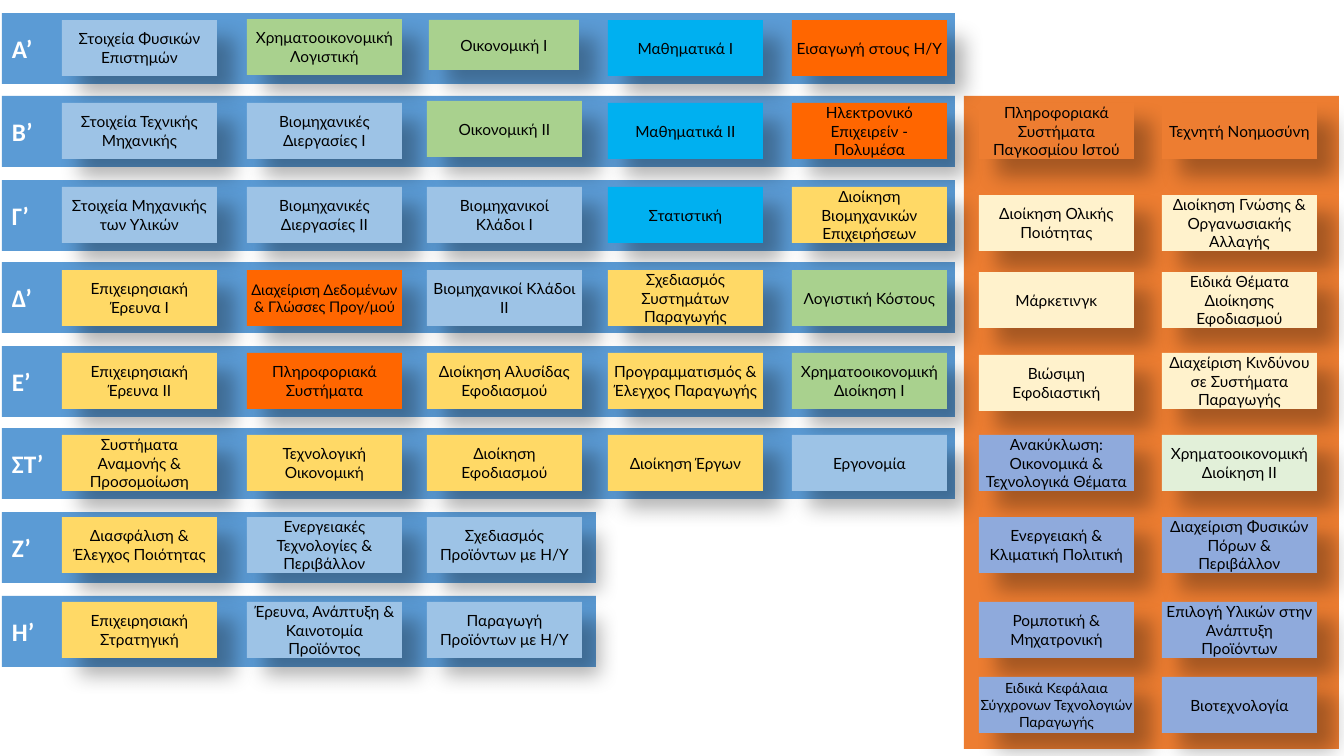
from lxml.etree import SubElement
from pptx import Presentation
from pptx.dml.color import RGBColor
from pptx.enum.shapes import MSO_SHAPE as Shape
from pptx.enum.text import MSO_ANCHOR as Anchor, PP_ALIGN as Align
from pptx.oxml.ns import qn
from pptx.util import Pt

PX = 914400 / 100.8
BAND = RGBColor(0x5B, 0x9B, 0xD5)
ELECTIVE = RGBColor(0xED, 0x7D, 0x31)
WHITE = RGBColor(0xFF, 0xFF, 0xFF)
BLACK = RGBColor(0, 0, 0)
TECH = RGBColor(0x9D, 0xC3, 0xE6)
MGMT = RGBColor(0xFF, 0xD9, 0x66)
ECON = RGBColor(0xA9, 0xD1, 0x8E)
INFO = RGBColor(0xFF, 0x66, 0x00)
MATH = RGBColor(0x00, 0xB0, 0xF0)
PALE_MGMT = RGBColor(0xFF, 0xF2, 0xCC)
PALE_ECON = RGBColor(0xE2, 0xF0, 0xD9)
ENERGY = RGBColor(0x8F, 0xAA, 0xDC)

SEMESTERS = [
    ("Α’", 13, 20, [(TECH, "Στοιχεία Φυσικών Επιστημών"), (ECON, "Χρηματοοικονομική Λογιστική"),
                    (ECON, "Οικονομική Ι"), (MATH, "Μαθηματικά Ι"), (INFO, "Εισαγωγή στους Η/Υ")]),
    ("Β’", 96, 103, [(TECH, "Στοιχεία Τεχνικής Μηχανικής"), (TECH, "Βιομηχανικές Διεργασίες Ι"),
                     (ECON, "Οικονομική ΙΙ"), (MATH, "Μαθηματικά ΙΙ"),
                     (INFO, "Ηλεκτρονικό Επιχειρείν - Πολυμέσα")]),
    ("Γ’", 180, 187, [(TECH, "Στοιχεία Μηχανικής των Υλικών"), (TECH, "Βιομηχανικές Διεργασίες ΙΙ"),
                      (TECH, "Βιομηχανικοί Κλάδοι Ι"), (MATH, "Στατιστική"),
                      (MGMT, "Διοίκηση Βιομηχανικών Επιχειρήσεων")]),
    ("Δ’", 262, 270, [(MGMT, "Επιχειρησιακή Έρευνα Ι"), (INFO, "Διαχείριση Δεδομένων & Γλώσσες Προγ/μού"),
                      (TECH, "Βιομηχανικοί Κλάδοι ΙΙ"), (MGMT, "Σχεδιασμός Συστημάτων Παραγωγής"),
                      (ECON, "Λογιστική Κόστους")]),
    ("Ε’", 346, 353, [(MGMT, "Επιχειρησιακή Έρευνα ΙΙ"), (INFO, "Πληροφοριακά Συστήματα"),
                      (MGMT, "Διοίκηση Αλυσίδας Εφοδιασμού"), (MGMT, "Προγραμματισμός & Έλεγχος Παραγωγής"),
                      (ECON, "Χρηματοοικονομική Διοίκηση Ι")]),
    ("ΣΤ’", 428, 435, [(MGMT, "Συστήματα Αναμονής & Προσομοίωση"), (MGMT, "Τεχνολογική Οικονομική"),
                       (MGMT, "Διοίκηση Εφοδιασμού"), (MGMT, "Διοίκηση Έργων"), (TECH, "Εργονομία")]),
    ("Ζ’", 512, 517, [(MGMT, "Διασφάλιση & Έλεγχος Ποιότητας"), (TECH, "Ενεργειακές Τεχνολογίες & Περιβάλλον"),
                      (TECH, "Σχεδιασμός Προϊόντων με Η/Υ")]),
    ("Η’", 596, 602, [(MGMT, "Επιχειρησιακή Στρατηγική"), (TECH, "Έρευνα, Ανάπτυξη & Καινοτομία Προϊόντος"),
                      (TECH, "Παραγωγή Προϊόντων με Η/Υ")]),
]
ELECTIVES = [
    (103, [(ELECTIVE, "Πληροφοριακά Συστήματα Παγκοσμίου Ιστού"), (ELECTIVE, "Τεχνητή Νοημοσύνη")]),
    (195, [(PALE_MGMT, "Διοίκηση Ολικής Ποιότητας"), (PALE_MGMT, "Διοίκηση Γνώσης & Οργανωσιακής Αλλαγής")]),
    (272, [(PALE_MGMT, "Μάρκετινγκ"), (PALE_MGMT, "Ειδικά Θέματα Διοίκησης Εφοδιασμού")]),
    (353, [(PALE_MGMT, "Βιώσιμη Εφοδιαστική"), (PALE_MGMT, "Διαχείριση Κινδύνου σε Συστήματα Παραγωγής")]),
    (435, [(ENERGY, "Ανακύκλωση: Οικονομικά & Τεχνολογικά Θέματα"), (PALE_ECON, "Χρηματοοικονομική Διοίκηση ΙΙ")]),
    (517, [(ENERGY, "Ενεργειακή & Κλιματική Πολιτική"), (ENERGY, "Διαχείριση Φυσικών Πόρων & Περιβάλλον")]),
    (602, [(ENERGY, "Ρομποτική & Μηχατρονική"), (ENERGY, "Επιλογή Υλικών στην Ανάπτυξη Προϊόντων")]),
    (677, [(ENERGY, "Ειδικά Κεφάλαια Σύγχρονων Τεχνολογιών Παραγωγής"), (ENERGY, "Βιοτεχνολογία")]),
]
SEMESTER_COLUMNS = [62, 247, 427, 608, 792]
ELECTIVE_COLUMNS = [979, 1162]
COURSE_WIDTH, COURSE_HEIGHT = 155, 56
FRAMES = {"Οικονομική Ι": (429, 20, 150, 50), "Οικονομική ΙΙ": (427, 101, 155, 56),
          "Χρηματοοικονομική Λογιστική": (247, 19, 155, 56), "Βιώσιμη Εφοδιαστική": (979, 355, 155, 56)}
SIDE_INSETS = {"Έρευνα, Ανάπτυξη & Καινοτομία Προϊόντος": 2, "Λογιστική Κόστους": 2,
               "Βιομηχανικοί Κλάδοι Ι": 8, "Ειδικά Κεφάλαια Σύγχρονων Τεχνολογιών Παραγωγής": 0}
SIZES = {"Διαχείριση Δεδομένων & Γλώσσες Προγ/μού": 10.5,
         "Ειδικά Κεφάλαια Σύγχρονων Τεχνολογιών Παραγωγής": 10}

deck = Presentation()
deck.slide_width, deck.slide_height = round(1344 * PX), round(756 * PX)
slide = deck.slides.add_slide(deck.slide_layouts[6])


def add_box(frame, fill):
    box = slide.shapes.add_shape(Shape.RECTANGLE, *[round(v * PX) for v in frame])
    box.fill.solid()
    box.fill.fore_color.rgb = fill
    box.line.fill.background()
    box.shadow.inherit = False
    return box


def write(box, text, font, size, color, align, side, bold=False):
    frame = box.text_frame
    frame.word_wrap = True
    frame.vertical_anchor = Anchor.MIDDLE
    frame.margin_left = frame.margin_right = round(side * PX)
    frame.margin_top = frame.margin_bottom = round(8 * PX)
    paragraph = frame.paragraphs[0]
    paragraph.alignment = align
    run = paragraph.add_run()
    run.text = text
    run.font.name = font
    run.font.size = Pt(size)
    run.font.bold = bold
    run.font.color.rgb = color


add_box((964, 96, 375, 653), ELECTIVE)
courses = []
for semester, band_top, course_top, row in SEMESTERS:
    band = add_box((2, band_top, 953 if len(row) == 5 else 594, 71), BAND)
    write(band, semester, "Calibri", 18, WHITE, Align.LEFT, 10, True)
    courses += [(left, course_top, *course) for left, course in zip(SEMESTER_COLUMNS, row)]
for course_top, row in ELECTIVES:
    courses += [(left, course_top, *course) for left, course in zip(ELECTIVE_COLUMNS, row)]

for left, top, fill, title in courses:
    course = add_box(FRAMES.get(title, (left, top, COURSE_WIDTH, COURSE_HEIGHT)), fill)
    effects = course._element.spPr.find(qn("a:effectLst"))
    shadow = SubElement(effects, qn("a:outerShdw"), blurRad=str(Pt(15)), dist=str(Pt(18)),
                        dir="2700000", algn="tl", rotWithShape="0")
    shade = SubElement(shadow, qn("a:srgbClr"), val=str(BLACK))
    SubElement(shade, qn("a:alpha"), val="30000")
    write(course, title, "Lato", SIZES.get(title, 11), BLACK, Align.CENTER, SIDE_INSETS.get(title, 4))

deck.save("out.pptx")
